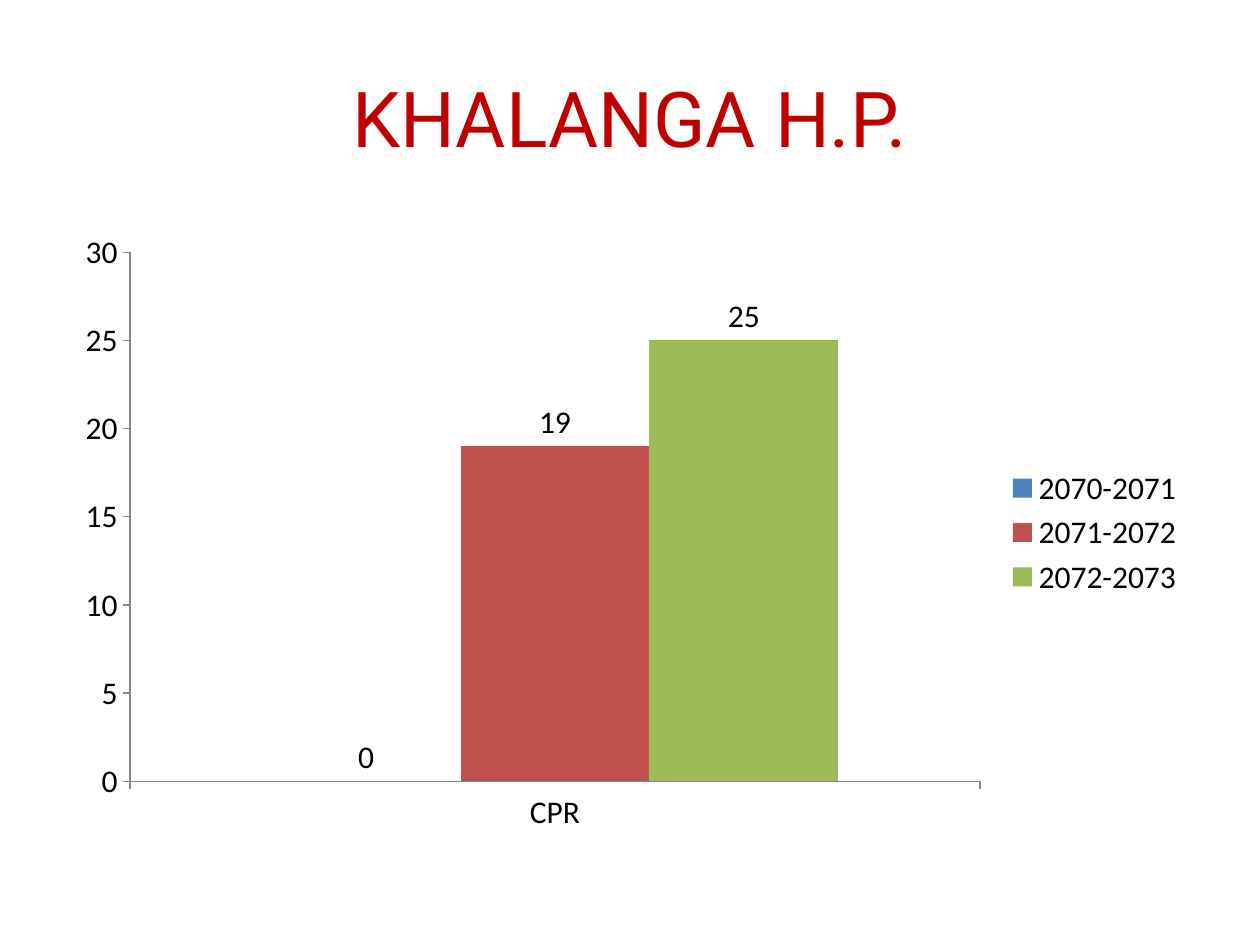
from dataclasses import dataclass

from pptx import Presentation
from pptx.chart.data import CategoryChartData
from pptx.dml.color import RGBColor
from pptx.enum.chart import XL_CHART_TYPE, XL_LABEL_POSITION, XL_LEGEND_POSITION, XL_TICK_MARK
from pptx.enum.text import MSO_ANCHOR, PP_ALIGN
from pptx.util import Cm, Pt

COLUMN = XL_CHART_TYPE.COLUMN_CLUSTERED
OUTSIDE_END = XL_LABEL_POSITION.OUTSIDE_END
LEGEND_RIGHT = XL_LEGEND_POSITION.RIGHT
TICK_OUT, TICK_NONE = XL_TICK_MARK.OUTSIDE, XL_TICK_MARK.NONE
MIDDLE = MSO_ANCHOR.MIDDLE
CENTER = PP_ALIGN.CENTER


@dataclass(frozen=True)
class Theme:
    title_font: str = "Roboto"
    chart_font: str = "Calibri"
    title_size: int = 44
    chart_size: int = 18
    title: str = "C00000"
    text: str = "000000"
    axis: str = "868686"
    background: str = "FFFFFF"
    series: tuple = ("4F81BD", "C0504D", "9BBB59")


THEME = Theme()
CPR_BY_YEAR = {"2070-2071": 0, "2071-2072": 19, "2072-2073": 25}


def style_font(font, name, size, color):
    font.name = name
    font.size = Pt(size)
    font.color.rgb = RGBColor.from_string(color)


def add_title(slide, box, text):
    tf = slide.shapes.add_textbox(*box).text_frame
    tf.word_wrap = True
    tf.vertical_anchor = MIDDLE
    p = tf.paragraphs[0]
    p.alignment = CENTER
    r = p.add_run()
    r.text = text
    style_font(r.font, THEME.title_font, THEME.title_size, THEME.title)


def add_cpr_chart(slide, box):
    data = CategoryChartData()
    data.categories = ["CPR"]
    for year, value in CPR_BY_YEAR.items():
        data.add_series(year, [value])
    chart = slide.shapes.add_chart(COLUMN, *box, data).chart
    chart.has_title = False
    style_font(chart.font, THEME.chart_font, THEME.chart_size, THEME.text)

    # Legend
    chart.has_legend = True
    chart.legend.position = LEGEND_RIGHT
    chart.legend.include_in_layout = False

    # Axes
    for axis in (chart.category_axis, chart.value_axis):
        axis.has_major_gridlines = False
        axis.major_tick_mark = TICK_OUT
        axis.minor_tick_mark = TICK_NONE
        axis.format.line.color.rgb = RGBColor.from_string(THEME.axis)
    chart.value_axis.minimum_scale = 0
    chart.value_axis.maximum_scale = 30
    chart.value_axis.major_unit = 5

    # Columns and their values
    plot = chart.plots[0]
    plot.vary_by_categories = False
    plot.gap_width = 150
    plot.overlap = 0
    for series, color in zip(plot.series, THEME.series):
        series.format.fill.solid()
        series.format.fill.fore_color.rgb = RGBColor.from_string(color)
        series.data_labels.show_value = True
        series.data_labels.position = OUTSIDE_END


def main():
    prs = Presentation()
    prs.slide_width, prs.slide_height = Cm(25.4), Cm(19.05)
    slide = prs.slides.add_slide(prs.slide_layouts[6])
    fill = slide.background.fill
    fill.solid()
    fill.fore_color.rgb = RGBColor.from_string(THEME.background)

    margin = Cm(1.27)
    width = prs.slide_width - 2 * margin
    add_title(slide, (margin, Cm(0.76), width, Cm(3.18)), "KHALANGA H.P.")
    add_cpr_chart(slide, (margin, Cm(4.45), width, Cm(12.57)))
    prs.save("out.pptx")


if __name__ == "__main__":
    main()
